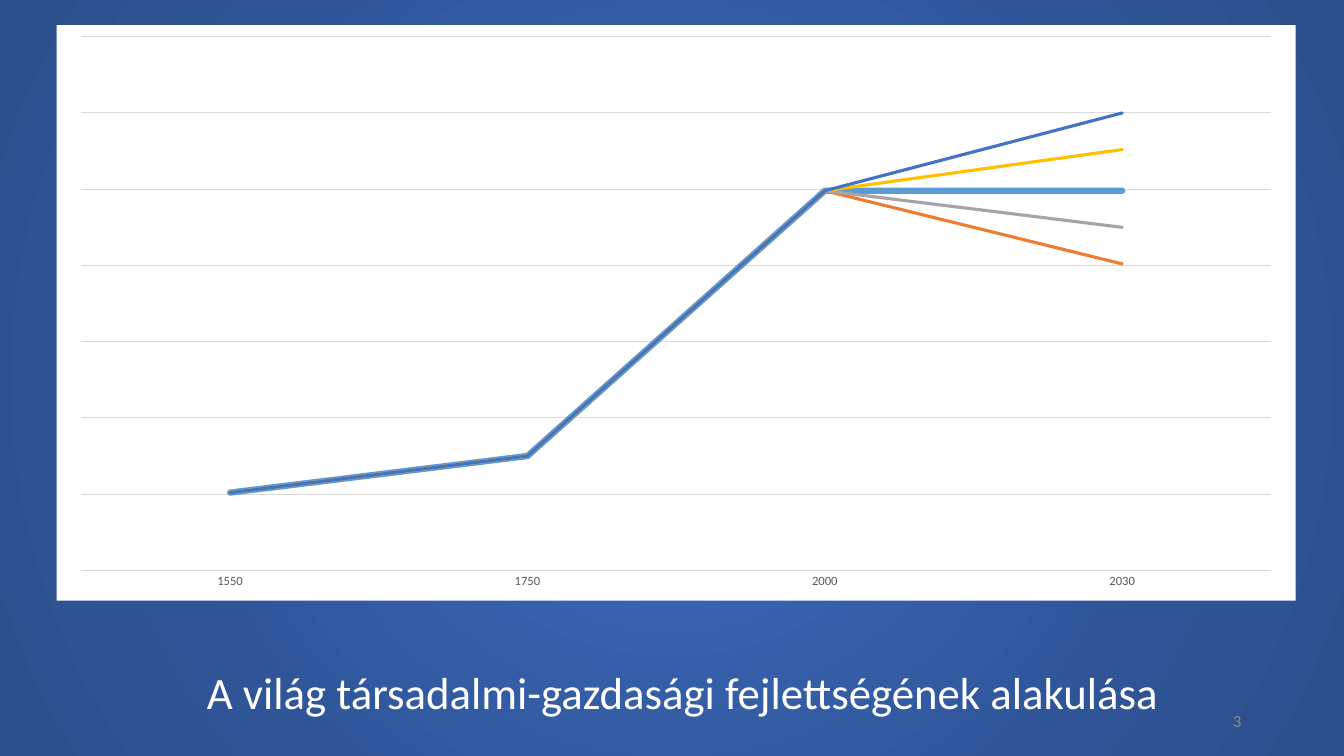
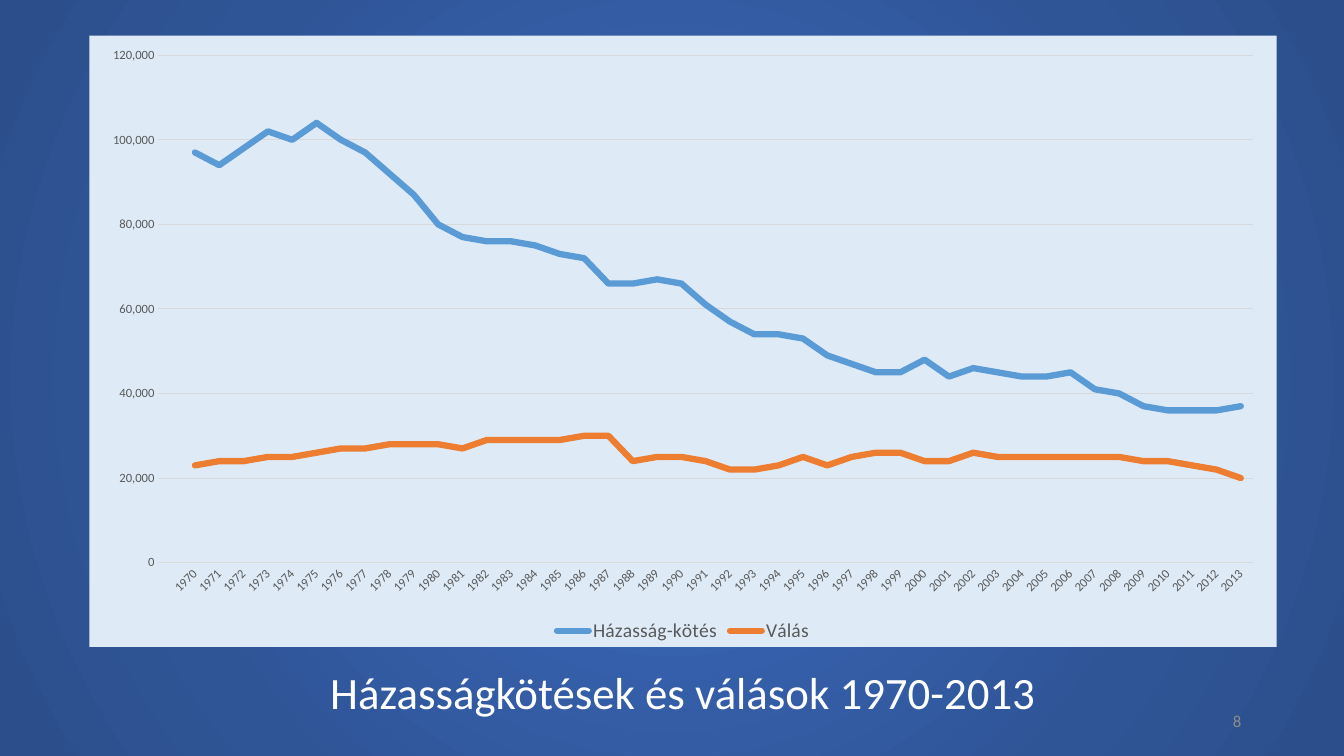
from copy import deepcopy

from pptx import Presentation
from pptx.chart.data import CategoryChartData
from pptx.dml.color import RGBColor
from pptx.enum.chart import XL_CHART_TYPE, XL_LEGEND_POSITION, XL_TICK_LABEL_POSITION, XL_TICK_MARK
from pptx.enum.shapes import PP_PLACEHOLDER
from pptx.enum.text import MSO_ANCHOR, MSO_AUTO_SIZE, PP_ALIGN
from pptx.oxml import parse_xml
from pptx.oxml.ns import nsdecls, qn
from pptx.util import Pt

# Boxes are left, top, width, height in px.
EMU_PER_PX = 9525
SLIDE_SIZE = (1280, 720)
TITLE_BOX = (107, 628, 1087, 61)
NUMBER_BOX = (904, 667, 288, 38)
DEVELOPMENT_BOX = (54, 24, 1180, 548)
MARRIAGE_BOX = (85, 34, 1131, 582)

FONT = "Calibri"
BLACK = "000000"
WHITE = "FFFFFF"
PALE_BLUE = "DEEBF7"
GRID_GREY = "D9D9D9"
LABEL_GREY = "595959"
NUMBER_GREY = "8C8C8C"
SERIES_COLOURS = ("5B9BD5", "ED7D31", "A5A5A5", "FFC000", "4472C4")
BACKGROUND_STOPS = ((0, "3864B3"), (23, "3864B3"), (69, "2F5597"), (97, "2C4F8C"))

GRID_WIDTH = 0.75
THIN_LINE = 2.25
THICK_LINE = 4.5

DEVELOPMENT_YEARS = ["1550", "1750", "2000", "2030"]
SHARED_PAST = [17, 25, 83]
FUTURES = [83, 67, 75, 92, 100]

FIRST_YEAR = 1970
THOUSANDS_PER_YEAR = {
    "Házasság-kötés": [
        97, 94, 98, 102, 100, 104, 100, 97, 92, 87,
        80, 77, 76, 76, 75, 73, 72, 66, 66, 67,
        66, 61, 57, 54, 54, 53, 49, 47, 45, 45,
        48, 44, 46, 45, 44, 44, 45, 41, 40, 37,
        36, 36, 36, 37,
    ],
    "Válás": [
        23, 24, 24, 25, 25, 26, 27, 27, 28, 28,
        28, 27, 29, 29, 29, 29, 30, 30, 24, 25,
        25, 24, 22, 22, 23, 25, 23, 25, 26, 26,
        24, 24, 26, 25, 25, 25, 25, 25, 25, 24,
        24, 23, 22, 20,
    ],
}


def px(length):
    return round(length * EMU_PER_PX)


def colour(hex_code):
    return RGBColor.from_string(hex_code)


def place(shape, box):
    shape.left, shape.top, shape.width, shape.height = map(px, box)


def style_font(font, size, hex_code):
    font.name = FONT
    font.size = Pt(size)
    font.color.rgb = colour(hex_code)


def style_line(line, hex_code, width):
    line.color.rgb = colour(hex_code)
    line.width = Pt(width)


def write_line(shape, text, size, hex_code, alignment):
    shape.text_frame.text = text
    paragraph = shape.text_frame.paragraphs[0]
    paragraph.alignment = alignment
    style_font(paragraph.runs[0].font, size, hex_code)


def find_placeholder(layout, kind):
    return next(
        shape for shape in layout.placeholders if shape.placeholder_format.type == kind
    )


def set_background(master):
    """Give every slide the circular blue gradient."""
    stops = "".join(
        f'<a:gs pos="{percent * 1000}"><a:srgbClr val="{colour(code)}"/></a:gs>'
        for percent, code in BACKGROUND_STOPS
    )
    gradient = parse_xml(
        f'<a:gradFill {nsdecls("a")} rotWithShape="1"><a:gsLst>{stops}</a:gsLst>'
        '<a:path path="circle">'
        '<a:fillToRect l="50000" t="50000" r="50000" b="50000"/>'
        "</a:path></a:gradFill>"
    )
    master.background.fill.solid()
    solid = master.element.find(".//" + qn("p:bgPr")).find(qn("a:solidFill"))
    solid.getparent().replace(solid, gradient)


def prepare_layout(presentation):
    """Set the background, title place and number place that the slides share."""
    set_background(presentation.slide_master)
    layout = presentation.slide_layouts.get_by_name("Title Only")
    place(find_placeholder(layout, PP_PLACEHOLDER.TITLE), TITLE_BOX)
    place(find_placeholder(layout, PP_PLACEHOLDER.SLIDE_NUMBER), NUMBER_BOX)
    return layout


def add_slide_number(slide, number):
    """Bring the layout's number placeholder onto the slide."""
    source = find_placeholder(slide.slide_layout, PP_PLACEHOLDER.SLIDE_NUMBER)
    slide.shapes.element.append(deepcopy(source.element))
    number_shape = slide.shapes[-1]
    write_line(number_shape, str(number), 12, NUMBER_GREY, PP_ALIGN.RIGHT)
    number_shape.text_frame.vertical_anchor = MSO_ANCHOR.MIDDLE


def add_titled_slide(presentation, layout, title, number):
    slide = presentation.slides.add_slide(layout)
    heading = slide.shapes.title
    write_line(heading, title, 32, WHITE, PP_ALIGN.CENTER)
    heading.text_frame.word_wrap = True
    heading.text_frame.auto_size = MSO_AUTO_SIZE.SHAPE_TO_FIT_TEXT
    add_slide_number(slide, number)
    return slide


def fill_chart_area(chart, hex_code):
    area = parse_xml(
        f'<c:spPr {nsdecls("c", "a")}><a:solidFill><a:srgbClr val="{colour(hex_code)}"/>'
        "</a:solidFill><a:ln><a:noFill/></a:ln></c:spPr>"
    )
    chart.element.find(qn("c:chart")).addnext(area)


def style_category_axis(chart):
    axis = chart.category_axis
    axis.tick_label_position = XL_TICK_LABEL_POSITION.NEXT_TO_AXIS
    style_line(axis.format.line, GRID_GREY, GRID_WIDTH)
    # This angle lets crowded labels turn by themselves.
    for body in chart.element.xpath(".//c:catAx/c:txPr/a:bodyPr"):
        body.set("rot", "-60000000")


def style_value_axis(axis, step, rows):
    """Scale the axis from zero to the given number of grid rows."""
    axis.minimum_scale = 0
    axis.maximum_scale = step * rows
    axis.major_unit = step
    axis.has_major_gridlines = True
    style_line(axis.major_gridlines.format.line, GRID_GREY, GRID_WIDTH)
    axis.format.line.fill.background()
    axis.tick_labels.number_format = "#,##0"
    axis.tick_labels.number_format_is_linked = False


def style_series(chart, widths):
    plot = chart.plots[0]
    plot.vary_by_categories = False
    for series, hex_code, width in zip(plot.series, SERIES_COLOURS, widths):
        series.smooth = False
        style_line(series.format.line, hex_code, width)
    for outline in chart.element.xpath(".//c:ser/c:spPr/a:ln"):
        outline.set("cap", "rnd")


def add_line_chart(slide, box, categories, values_by_name, widths, fill, step, rows):
    data = CategoryChartData()
    data.categories = categories
    for name, values in values_by_name.items():
        data.add_series(name, values)
    chart = slide.shapes.add_chart(XL_CHART_TYPE.LINE, *map(px, box), data).chart
    chart.has_title = False
    chart.has_legend = False
    style_font(chart.font, 10, BLACK)
    fill_chart_area(chart, fill)
    for axis in (chart.category_axis, chart.value_axis):
        axis.major_tick_mark = axis.minor_tick_mark = XL_TICK_MARK.NONE
        style_font(axis.tick_labels.font, 9, LABEL_GREY)
    style_category_axis(chart)
    style_value_axis(chart.value_axis, step, rows)
    style_series(chart, widths)
    return chart


def add_legend(chart):
    chart.has_legend = True
    chart.legend.position = XL_LEGEND_POSITION.BOTTOM
    chart.legend.include_in_layout = False
    style_font(chart.legend.font, 14, LABEL_GREY)


def build_development_slide(presentation, layout):
    """Show one shared past that branches into several futures."""
    slide = add_titled_slide(
        presentation, layout, "A világ társadalmi-gazdasági fejlettségének alakulása", 3
    )
    paths = {
        f"Series {index}": SHARED_PAST + [future]
        for index, future in enumerate(FUTURES, 1)
    }
    widths = [THICK_LINE] + [THIN_LINE] * (len(FUTURES) - 1)
    chart = add_line_chart(
        slide, DEVELOPMENT_BOX, DEVELOPMENT_YEARS, paths, widths, WHITE, step=16.67, rows=7
    )
    chart.value_axis.visible = False


def build_marriage_slide(presentation, layout):
    """Show the yearly counts after one blank leading category."""
    slide = add_titled_slide(presentation, layout, "Házasságkötések és válások 1970-2013", 8)
    counts = {
        name: [None] + [value * 1000 for value in thousands]
        for name, thousands in THOUSANDS_PER_YEAR.items()
    }
    year_count = len(THOUSANDS_PER_YEAR["Válás"])
    years = [""] + [str(FIRST_YEAR + offset) for offset in range(year_count)]
    widths = [THICK_LINE] * len(counts)
    chart = add_line_chart(
        slide, MARRIAGE_BOX, years, counts, widths, PALE_BLUE, step=20000, rows=6
    )
    add_legend(chart)


def main():
    presentation = Presentation()
    presentation.slide_width, presentation.slide_height = map(px, SLIDE_SIZE)
    layout = prepare_layout(presentation)
    build_development_slide(presentation, layout)
    build_marriage_slide(presentation, layout)
    presentation.save("out.pptx")


if __name__ == "__main__":
    main()
